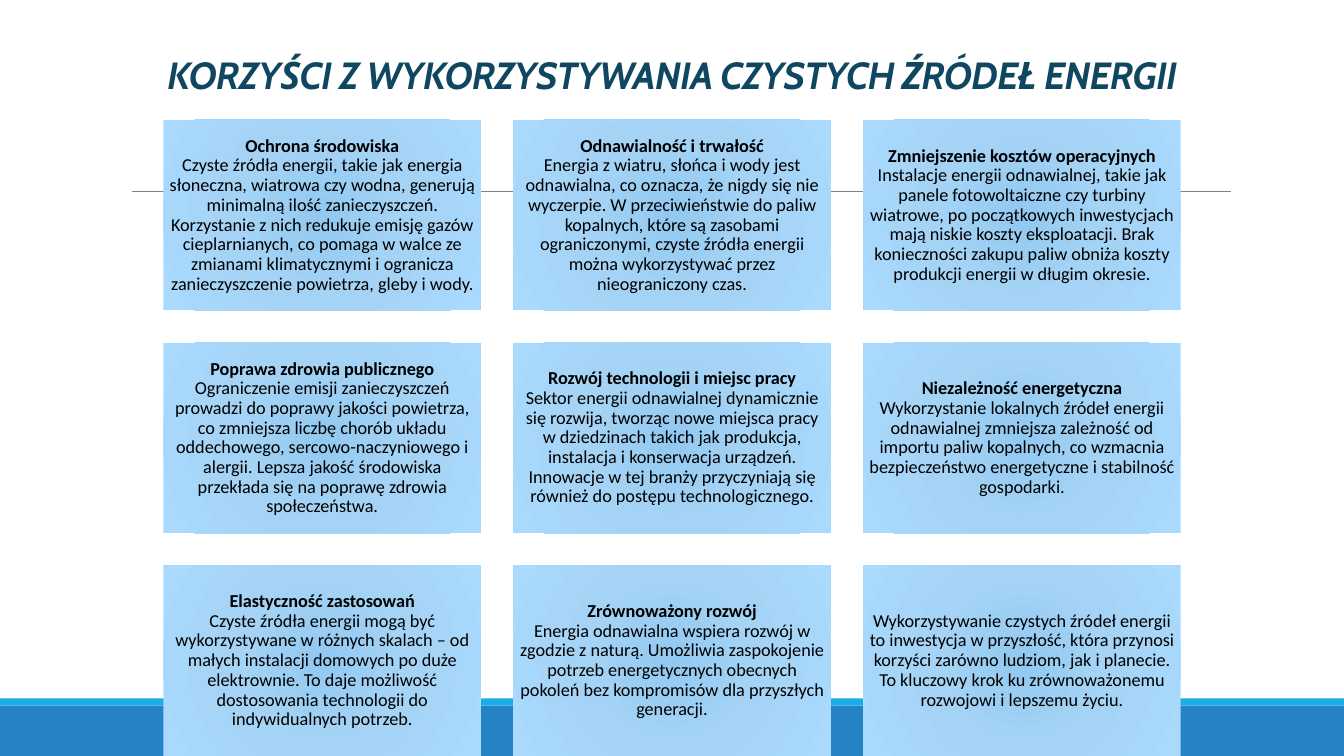
from copy import deepcopy

from pptx import Presentation, util as u
from pptx.dml.color import RGBColor
from pptx.enum import shapes, text
from pptx.oxml import parse_xml
from pptx.oxml.ns import nsdecls, qn

BLUE = RGBColor(0x26, 0x83, 0xC6)
CYAN = RGBColor(0x1C, 0xAD, 0xE4)
GRAY = RGBColor(0x80, 0x80, 0x80)
NAVY = RGBColor(0x0F, 0x47, 0x61)
BLACK = RGBColor(0, 0, 0)
STOPS = [
    (0, RGBColor(0x92, 0xC9, 0xF0)),
    (45, RGBColor(0xA4, 0xD3, 0xF5)),
    (100, RGBColor(0xA9, 0xD9, 0xFD)),
]

WIDTH, HEIGHT = 13.33, 7.5
LEFT, TOP = 1.62, 1.19
CARD_W, CARD_H, GAP = 3.15, 1.89, 0.32
COLS = 3

TITLE = "KORZYŚCI Z WYKORZYSTYWANIA CZYSTYCH ŹRÓDEŁ ENERGII"
CARDS = [
    ("Ochrona środowiska",
     "Czyste źródła energii, takie jak energia słoneczna, wiatrowa czy wodna, "
     "generują minimalną ilość zanieczyszczeń. Korzystanie z nich redukuje emisję "
     "gazów cieplarnianych, co pomaga w walce ze zmianami klimatycznymi i ogranicza "
     "zanieczyszczenie powietrza, gleby i wody."),
    ("Odnawialność i trwałość",
     "Energia z wiatru, słońca i wody jest odnawialna, co oznacza, że nigdy się nie "
     "wyczerpie. W przeciwieństwie do paliw kopalnych, które są zasobami "
     "ograniczonymi, czyste źródła energii można wykorzystywać przez nieograniczony "
     "czas."),
    ("Zmniejszenie kosztów operacyjnych",
     "Instalacje energii odnawialnej, takie jak panele fotowoltaiczne czy turbiny "
     "wiatrowe, po początkowych inwestycjach mają niskie koszty eksploatacji. Brak "
     "konieczności zakupu paliw obniża koszty produkcji energii w długim okresie."),
    ("Poprawa zdrowia publicznego",
     "Ograniczenie emisji zanieczyszczeń prowadzi do poprawy jakości powietrza, co "
     "zmniejsza liczbę chorób układu oddechowego, sercowo-naczyniowego i alergii. "
     "Lepsza jakość środowiska przekłada się na poprawę zdrowia społeczeństwa."),
    ("Rozwój technologii i miejsc pracy",
     "Sektor energii odnawialnej dynamicznie się rozwija, tworząc nowe miejsca pracy "
     "w dziedzinach takich jak produkcja, instalacja i konserwacja urządzeń. "
     "Innowacje w tej branży przyczyniają się również do postępu technologicznego."),
    ("Niezależność energetyczna",
     "Wykorzystanie lokalnych źródeł energii odnawialnej zmniejsza zależność od "
     "importu paliw kopalnych, co wzmacnia bezpieczeństwo energetyczne i stabilność "
     "gospodarki."),
    ("Elastyczność zastosowań",
     "Czyste źródła energii mogą być wykorzystywane w różnych skalach – od małych "
     "instalacji domowych po duże elektrownie. To daje możliwość dostosowania "
     "technologii do indywidualnych potrzeb."),
    ("Zrównoważony rozwój",
     "Energia odnawialna wspiera rozwój w zgodzie z naturą. Umożliwia zaspokojenie "
     "potrzeb energetycznych obecnych pokoleń bez kompromisów dla przyszłych "
     "generacji."),
    ("",
     "Wykorzystywanie czystych źródeł energii to inwestycja w przyszłość, która "
     "przynosi korzyści zarówno ludziom, jak i planecie. To kluczowy krok ku "
     "zrównoważonemu rozwojowi i lepszemu życiu."),
]


class Deck:
    head_font, body_font = "Cabin", "Calibri"
    head_size, body_size = 27, 13
    inset = 0.05

    def __init__(self):
        self.prs = Presentation()
        self.prs.slide_width = u.Inches(WIDTH)
        self.prs.slide_height = u.Inches(HEIGHT)
        self.slide = self.prs.slides.add_slide(self.prs.slide_layouts[6])

    def rect(self, x, y, w, h):
        """Add a plain rectangle without line or shadow."""
        box = self.slide.shapes.add_shape(
            shapes.MSO_SHAPE.RECTANGLE, *map(u.Inches, (x, y, w, h)))
        box.shadow.inherit = False
        box.line.fill.background()
        return box

    def band(self, y, h, color):
        box = self.rect(0, y, WIDTH, h)
        box.fill.solid()
        box.fill.fore_color.rgb = color

    def rule(self, x1, x2, y):
        line = self.slide.shapes.add_connector(
            shapes.MSO_CONNECTOR.STRAIGHT, *map(u.Inches, (x1, y, x2, y)))
        line.line.color.rgb = GRAY
        line.line.width = u.Pt(0.5)
        line._element.spPr.append(parse_xml(f"<a:effectLst {nsdecls('a')}/>"))

    def label(self, frame, words, anchor, spacing):
        """Set centred, wrapped text and return its paragraph."""
        frame.word_wrap = True
        frame.vertical_anchor = anchor
        para = frame.paragraphs[0]
        para.text = words
        para.alignment = text.PP_ALIGN.CENTER
        para.line_spacing = spacing
        return para

    def style(self, run, font, size, color, bold):
        run.font.name = font
        run.font.size = u.Pt(size)
        run.font.color.rgb = color
        run.font.bold = bold

    def title(self, words, x, y, w, h):
        box = self.slide.shapes.add_textbox(*map(u.Inches, (x, y, w, h)))
        para = self.label(box.text_frame, words, text.MSO_ANCHOR.BOTTOM, 0.85)
        run = para.runs[0]
        self.style(run, self.head_font, self.head_size, NAVY, True)
        run.font.italic = True
        run._r.get_or_add_rPr().set("spc", "-50")

    def glow(self, box):
        """Fill a shape with the circular gradient."""
        stops = "".join(
            f'<a:gs pos="{pos * 1000}"><a:srgbClr val="{color}"/></a:gs>'
            for pos, color in STOPS)
        grad = parse_xml(
            f'<a:gradFill {nsdecls("a")} rotWithShape="1"><a:gsLst>{stops}</a:gsLst>'
            '<a:path path="circle"><a:fillToRect l="100000" t="100000" '
            'r="100000" b="100000"/></a:path></a:gradFill>')
        box.fill.background()
        props = box._element.spPr
        props.replace(props.find(qn("a:noFill")), grad)

    def card(self, x, y, head, body):
        box = self.rect(x, y, CARD_W, CARD_H)
        self.glow(box)
        frame = box.text_frame
        frame.margin_left = frame.margin_right = u.Inches(self.inset)
        frame.margin_top = frame.margin_bottom = u.Inches(self.inset)
        words = f"{head}\v{body}" if head else body
        para = self.label(frame, words, text.MSO_ANCHOR.MIDDLE, 0.9)
        for run in para.runs:
            self.style(run, self.body_font, self.body_size, BLACK, run.text == head)
        for gap in para._p.findall(qn("a:br")):
            gap.append(deepcopy(para.runs[0]._r.get_or_add_rPr()))


def main():
    deck = Deck()
    deck.band(7, 0.5, BLUE)
    deck.band(6.93, 0.07, CYAN)
    deck.rule(1.31, 12.21, 1.9)
    deck.title(TITLE, 0.82, 0.13, 11.69, 0.88)
    for i, (head, body) in enumerate(CARDS):
        row, col = divmod(i, COLS)
        deck.card(LEFT + col * (CARD_W + GAP), TOP + row * (CARD_H + GAP), head, body)
    deck.prs.save("out.pptx")


if __name__ == "__main__":
    main()
